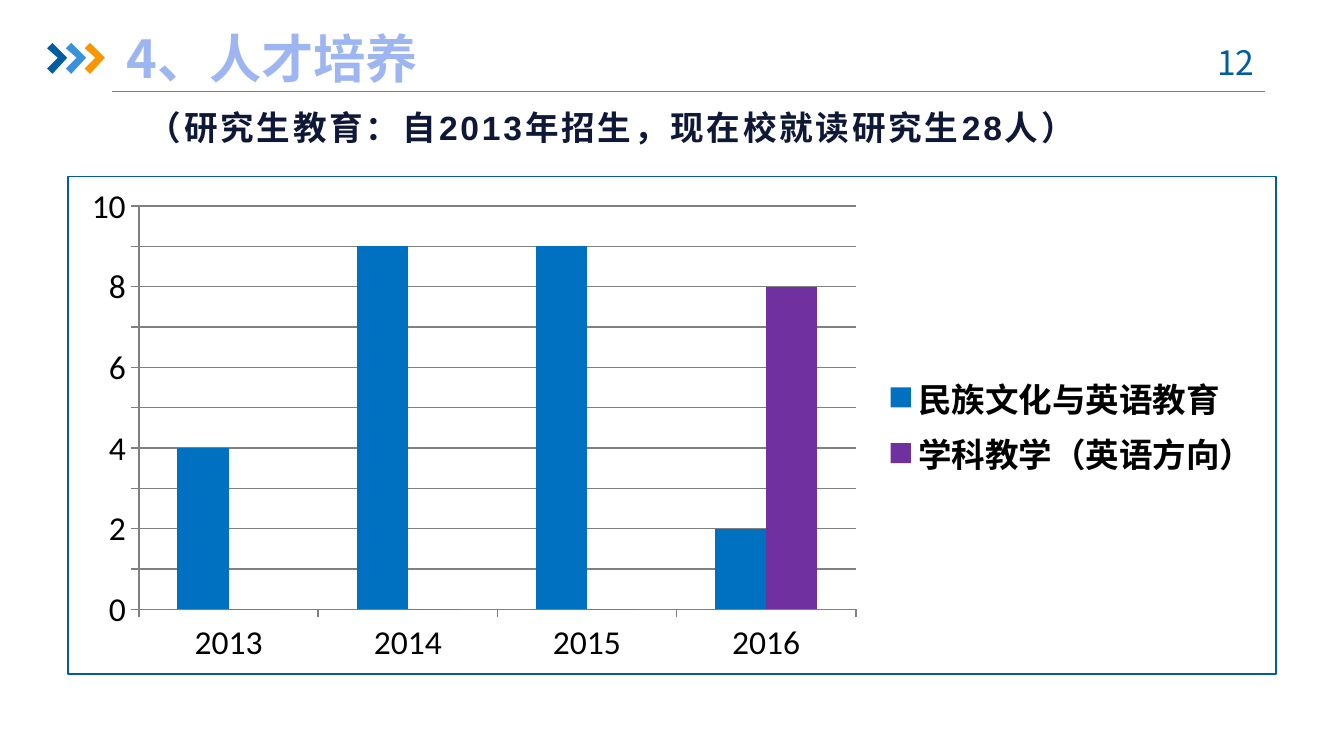
import dataclasses
import typing

import lxml.etree
import pptx
import pptx.chart.data
import pptx.dml.color
import pptx.enum.chart
import pptx.enum.shapes
import pptx.enum.text
import pptx.oxml
import pptx.oxml.ns
import pptx.util

Inches = pptx.util.Inches
Pt = pptx.util.Pt
qn = pptx.oxml.ns.qn


@dataclasses.dataclass(frozen=True)
class Theme:
    navy: str = "005DA2"
    sky: str = "3992DB"
    orange: str = "F79600"
    grey: str = "808080"
    title: str = "9DB6F1"
    subtitle: str = "0F1836"
    black: str = "000000"
    culture: str = "0070C0"
    teaching: str = "7030A0"
    cjk: str = "Noto Sans CJK SC"
    latin: str = "Arial"
    chart_font: str = "Calibri"
    title_size: int = 28
    body_size: int = 18
    line_width: float = 0.75


THEME = Theme()


@dataclasses.dataclass(frozen=True)
class Label:
    text: str
    left: float
    top: float
    width: float
    height: float
    size: int
    color: str
    font: str
    bold: bool = True
    centered: bool = False
    spacing: float = 0
    side_inset: float = 0


@dataclasses.dataclass(frozen=True)
class Programme:
    name: str
    intake: tuple[int, ...]
    color: str


@dataclasses.dataclass(frozen=True)
class Area:
    left: float
    top: float
    width: float
    height: float


LABELS = (
    Label("12", 8.83, 0.26, 0.73, 0.4, THEME.body_size, THEME.navy, THEME.cjk,
          bold=False, centered=True, side_inset=0.1),
    Label("4、人才培养", 0.94, 0.22, 5.72, 0.41, THEME.title_size, THEME.title, THEME.cjk),
    Label("（研究生教育：自2013年招生，现在校就读研究生28人）", 1.1, 0.74, 7.36, 0.41,
          THEME.body_size, THEME.subtitle, THEME.latin, spacing=1.5),
)
YEARS = ("2013", "2014", "2015", "2016")
PROGRAMMES = (
    Programme("民族文化与英语教育", (4, 9, 9, 2), THEME.culture),
    Programme("学科教学（英语方向）", (0, 0, 0, 8), THEME.teaching),
)
CHART = Area(0.5, 1.31, 9, 3.71)
PLOT = Area(0.53, 0.22, 5.34, 3.01)  # measured from the chart corner


def rgb(value: str) -> pptx.dml.color.RGBColor:
    return pptx.dml.color.RGBColor.from_string(value)


def add_label(slide: typing.Any, label: Label) -> None:
    box = slide.shapes.add_textbox(Inches(label.left), Inches(label.top),
                                   Inches(label.width), Inches(label.height))
    frame = box.text_frame
    frame.word_wrap = True
    frame.vertical_anchor = pptx.enum.text.MSO_ANCHOR.MIDDLE
    frame.margin_left = frame.margin_right = Inches(label.side_inset)
    paragraph = frame.paragraphs[0]
    paragraph.text = label.text
    if label.centered:
        paragraph.alignment = pptx.enum.text.PP_ALIGN.CENTER
    font = paragraph.font
    font.size = Pt(label.size)
    font.bold = label.bold
    font.name = label.font
    font.color.rgb = rgb(label.color)
    properties = paragraph._p.pPr.find(qn("a:defRPr"))
    east_asian = lxml.etree.SubElement(properties, qn("a:ea"))
    east_asian.set("typeface", THEME.cjk)
    if label.spacing:
        properties.set("spc", str(int(label.spacing * 100)))


def add_chevron(slide: typing.Any, left: float, color: str) -> None:
    top = 0.32
    outline = ((0.04, 0), (0.15, 0.11), (0.04, 0.23), (0, 0.19), (0.08, 0.11), (0, 0.04))
    points = [(Inches(left + x), Inches(top + y)) for x, y in outline]
    builder = slide.shapes.build_freeform(*points[0])
    builder.add_line_segments(points[1:], close=True)
    chevron = builder.convert_to_shape()
    chevron.shadow.inherit = False
    chevron.fill.solid()
    chevron.fill.fore_color.rgb = rgb(color)
    chevron.line.fill.background()


def add_rule(slide: typing.Any) -> None:
    rule = slide.shapes.add_connector(pptx.enum.shapes.MSO_CONNECTOR.STRAIGHT,
                                      Inches(0.83), Inches(0.68), Inches(9.41), Inches(0.68))
    rule.line.color.rgb = rgb(THEME.grey)
    rule.line.width = Pt(THEME.line_width)
    lxml.etree.SubElement(rule._element.spPr, qn("a:effectLst"))


def frame_chart(chart: typing.Any) -> None:
    """Outline the chart and fix its plot area."""
    border = pptx.oxml.parse_xml(
        f'<c:spPr {pptx.oxml.ns.nsdecls("c", "a")}><a:noFill/>'
        f'<a:ln w="{Pt(THEME.line_width)}"><a:solidFill><a:srgbClr val="{THEME.navy}"/>'
        '</a:solidFill></a:ln></c:spPr>')
    space = chart._chartSpace
    space.find(qn("c:chart")).addnext(border)

    plot_area = space.find(qn("c:chart")).find(qn("c:plotArea"))
    for old in plot_area.findall(qn("c:layout")):
        plot_area.remove(old)
    layout = lxml.etree.Element(qn("c:layout"))
    manual = lxml.etree.SubElement(layout, qn("c:manualLayout"))
    settings = {"layoutTarget": "inner", "xMode": "edge", "yMode": "edge",
                "x": PLOT.left / CHART.width, "y": PLOT.top / CHART.height,
                "w": PLOT.width / CHART.width, "h": PLOT.height / CHART.height}
    for tag, value in settings.items():
        lxml.etree.SubElement(manual, qn(f"c:{tag}")).set("val", str(value))
    plot_area.insert(0, layout)


def add_intake_chart(slide: typing.Any) -> None:
    data = pptx.chart.data.CategoryChartData()
    data.categories = YEARS
    for programme in PROGRAMMES:
        data.add_series(programme.name, programme.intake)
    chart = slide.shapes.add_chart(pptx.enum.chart.XL_CHART_TYPE.COLUMN_CLUSTERED,
                                   Inches(CHART.left), Inches(CHART.top),
                                   Inches(CHART.width), Inches(CHART.height), data).chart
    chart.has_title = False
    chart.font.size = Pt(THEME.body_size)
    chart.font.name = THEME.chart_font
    chart.font.color.rgb = rgb(THEME.black)

    plot = chart.plots[0]
    plot.gap_width = 150
    plot.overlap = 0
    plot.vary_by_categories = False
    for series, programme in zip(plot.series, PROGRAMMES):
        series.format.fill.solid()
        series.format.fill.fore_color.rgb = rgb(programme.color)

    # Axes
    value_axis = chart.value_axis
    value_axis.minimum_scale = 0
    value_axis.maximum_scale = 10
    value_axis.major_unit = 1
    value_axis.has_major_gridlines = True
    for axis in (chart.category_axis, value_axis):
        axis.major_tick_mark = pptx.enum.chart.XL_TICK_MARK.OUTSIDE
    for part in (chart.category_axis, value_axis, value_axis.major_gridlines):
        part.format.line.color.rgb = rgb(THEME.grey)
        part.format.line.width = Pt(THEME.line_width)

    # Legend
    chart.has_legend = True
    chart.legend.position = pptx.enum.chart.XL_LEGEND_POSITION.RIGHT
    chart.legend.include_in_layout = False
    chart.legend.font.bold = True
    chart.legend.font.size = Pt(THEME.body_size)
    frame_chart(chart)


def main() -> None:
    deck = pptx.Presentation()
    deck.slide_width = Inches(10)
    deck.slide_height = deck.slide_width * 9 // 16
    slide = deck.slides.add_slide(deck.slide_layouts[6])

    # Header
    add_rule(slide)
    for index, color in enumerate((THEME.navy, THEME.sky, THEME.orange)):
        add_chevron(slide, 0.35 + 0.14 * index, color)

    # Content
    add_intake_chart(slide)
    for label in LABELS:
        add_label(slide, label)
    deck.save("out.pptx")


if __name__ == "__main__":
    main()
